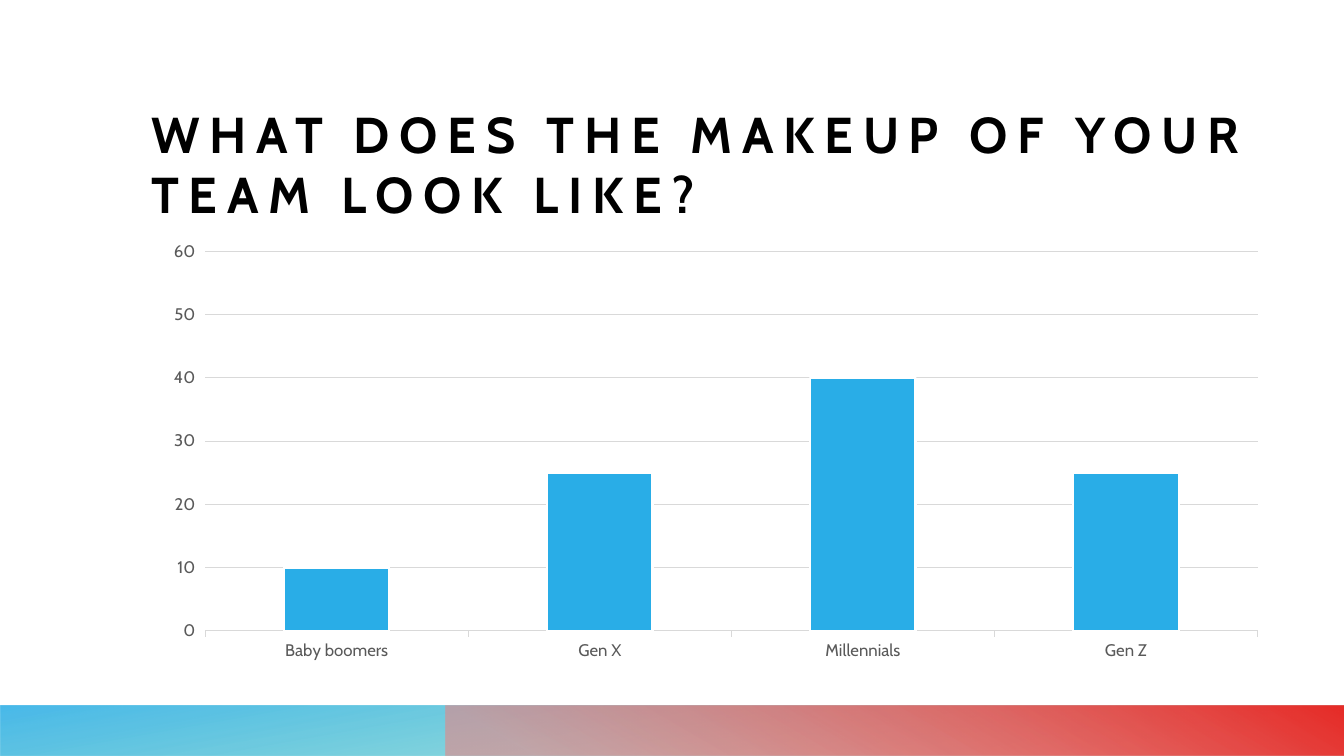
from dataclasses import dataclass

from pptx import Presentation
from pptx.chart.data import CategoryChartData as ChartData
from pptx.dml.color import RGBColor as Color
from pptx.enum.chart import XL_CHART_TYPE as ChartType, XL_TICK_MARK as TickMark
from pptx.enum.shapes import MSO_SHAPE as ShapeType
from pptx.enum.text import MSO_ANCHOR as Anchor
from pptx.oxml.ns import qn
from pptx.oxml.xmlchemy import OxmlElement
from pptx.util import Pt


@dataclass(frozen=True)
class Theme:
    font: str = "Cabin"
    title: str = "000000"
    label: str = "595959"
    rule: str = "D9D9D9"
    bar: str = "29ADE7"
    teal: str = "14B4A3"
    pink: str = "F1817F"
    red: str = "E72D29"
    white: str = "FFFFFF"
    title_size: float = 36
    label_size: float = 12
    chart_size: float = 10


@dataclass(frozen=True)
class Box:
    left: float
    top: float
    width: float
    height: float

    def lengths(self) -> tuple:
        return Pt(self.left), Pt(self.top), Pt(self.width), Pt(self.height)


@dataclass(frozen=True)
class Stop:
    percent: float
    color: str
    opacity: int = 100


@dataclass(frozen=True)
class Band:
    box: Box
    stops: tuple
    angle: float
    rotation: float = 0


THEME = Theme()
PAGE_WIDTH, PAGE_HEIGHT = 960, 540
BAND_TOP, BAND_HEIGHT = 504, 36
RED_LEFT = 318
TITLE_BOX = Box(108, 62.6, 806.4, 97.2)
CHART_BOX = Box(108, 166.3, 806.4, 311.8)
BANDS = (
    Band(Box(0, BAND_TOP, PAGE_WIDTH, BAND_HEIGHT),
         (Stop(14, THEME.teal, 28), Stop(100, THEME.bar, 85)), 100, rotation=180),
    Band(Box(RED_LEFT, BAND_TOP, PAGE_WIDTH - RED_LEFT, BAND_HEIGHT),
         (Stop(9, THEME.pink, 55), Stop(99, THEME.red)), 240),
)
TEAM_SHARES = {"Baby boomers": 10, "Gen X": 25, "Millennials": 40, "Gen Z": 25}


def draw_band(page, band: Band) -> None:
    shape = page.shapes.add_shape(ShapeType.RECTANGLE, *band.box.lengths())
    shape.shadow.inherit = False
    shape.line.fill.background()
    shape.rotation = band.rotation
    shape.element.spPr.find(qn("a:xfrm")).set("flipH", "1")
    shape.fill.gradient()
    shape.fill.gradient_angle = 360 - band.angle
    for target, stop in zip(shape.fill.gradient_stops, band.stops):
        target.position = stop.percent / 100
        target.color.rgb = Color.from_string(stop.color)
    for node, stop in zip(shape.element.spPr.iter(qn("a:srgbClr")), band.stops):
        if stop.opacity < 100:
            alpha = OxmlElement("a:alpha")
            alpha.set("val", str(stop.opacity * 1000))
            node.append(alpha)


def style_font(font, size: float, color: str, bold: bool = False) -> None:
    font.name, font.size, font.bold = THEME.font, Pt(size), bold
    font.color.rgb = Color.from_string(color)


def draw_text(page, box: Box, text: str, *, size: float, color: str,
              bold: bool = False, spacing: float = 0, anchor=Anchor.TOP) -> None:
    frame = page.shapes.add_textbox(*box.lengths()).text_frame
    frame.word_wrap = True
    frame.vertical_anchor = anchor
    frame.margin_left = frame.margin_top = frame.margin_right = frame.margin_bottom = 0
    span = frame.paragraphs[0].add_run()
    span.text = text
    style_font(span.font, size, color, bold)
    span.font._element.set("spc", str(round(spacing * 100)))


def style_line(line, color: str, width: float) -> None:
    line.color.rgb = Color.from_string(color)
    line.width = Pt(width)


def draw_chart(page, box: Box, shares: dict) -> None:
    data = ChartData()
    data.categories = list(shares)
    data.add_series("Series 1", list(shares.values()))
    chart = page.shapes.add_chart(ChartType.COLUMN_CLUSTERED, *box.lengths(), data).chart
    chart.has_legend = chart.has_title = False
    style_font(chart.font, THEME.chart_size, THEME.title)

    for axis in (chart.category_axis, chart.value_axis):
        axis.major_tick_mark = TickMark.OUTSIDE
        axis.minor_tick_mark = TickMark.NONE
        style_font(axis.tick_labels.font, THEME.label_size, THEME.label)
    style_line(chart.category_axis.format.line, THEME.rule, 0.75)
    values = chart.value_axis
    values.minimum_scale, values.maximum_scale, values.major_unit = 0, 60, 10
    values.format.line.fill.background()
    style_line(values.major_gridlines.format.line, THEME.rule, 0.75)

    plot = chart.plots[0]
    plot.gap_width = 150
    plot.vary_by_categories = False
    bars = plot.series[0]
    bars.format.fill.solid()
    bars.format.fill.fore_color.rgb = Color.from_string(THEME.bar)
    style_line(bars.format.line, THEME.white, 1.5)


def main() -> None:
    """Build the team makeup slide and save it."""
    deck = Presentation()
    deck.slide_width, deck.slide_height = Pt(PAGE_WIDTH), Pt(PAGE_HEIGHT)
    page = deck.slides.add_slide(deck.slide_layouts[6])
    page.background.fill.solid()
    page.background.fill.fore_color.rgb = Color.from_string(THEME.white)
    for band in BANDS:
        draw_band(page, band)
    draw_text(page, TITLE_BOX, "WHAT DOES THE MAKEUP OF YOUR TEAM LOOK LIKE?",
              size=THEME.title_size, color=THEME.title, bold=True, spacing=7,
              anchor=Anchor.BOTTOM)
    draw_chart(page, CHART_BOX, TEAM_SHARES)
    deck.save("out.pptx")


if __name__ == "__main__":
    main()
